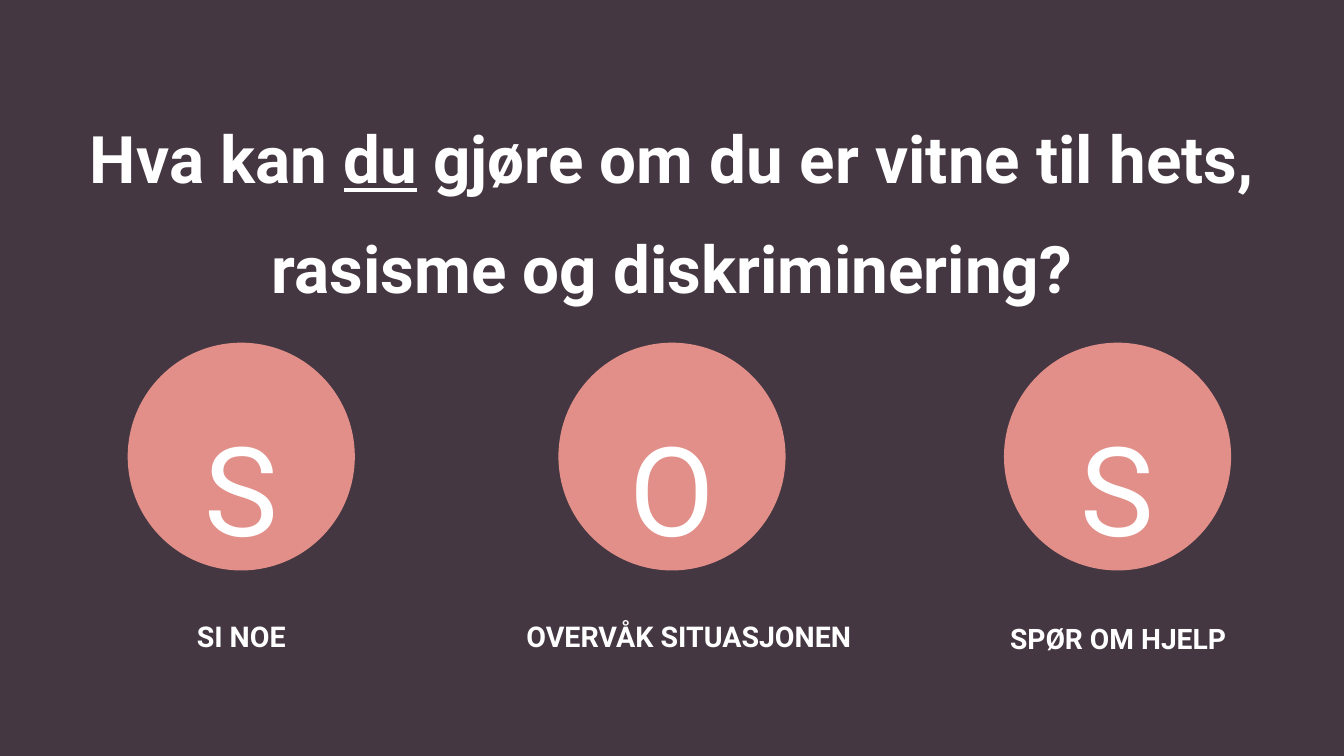
from pptx import Presentation
from pptx.dml.color import RGBColor
from pptx.enum.shapes import MSO_SHAPE
from pptx.enum.text import MSO_ANCHOR, MSO_AUTO_SIZE, PP_ALIGN
from pptx.util import Inches, Pt

OVAL = MSO_SHAPE.OVAL
TOP, MIDDLE = MSO_ANCHOR.TOP, MSO_ANCHOR.MIDDLE
CENTER = PP_ALIGN.CENTER
NO_AUTOFIT = MSO_AUTO_SIZE.NONE

SLIDE_WIDTH, SLIDE_HEIGHT = Inches(20), Inches(11.25)
BACKGROUND, CORAL, WHITE = "443742", "E28F89", "FFFFFF"
FONT = "Roboto"

TITLE_BOX = (0, 11.47, 100, 25.16)
TITLE_RUNS = [
    ("Hva kan ", False),
    ("du", True),
    (" gjøre om du er vitne til hets, rasisme og diskriminering?", False),
]
STEPS = [
    ("S", (9.5, 45.33, 16.9, 30.13), "SI NOE", (14.35, 80.09, 7.2, 4.53), 30.6),
    ("O", (41.55, 45.33, 16.9, 30.13), "OVERVÅK SITUASJONEN", (38.4, 80.09, 25.7, 4.53), 30.6),
    ("S", (74.7, 45.33, 16.9, 30.13), "SPØR OM HJELP", (74.85, 80.44, 16.7, 4.53), 30.2),
]


def to_lengths(box):
    """Turn a box in percent of the slide into left, top, width and height."""
    sides = (SLIDE_WIDTH, SLIDE_HEIGHT) * 2
    return [round(share * side / 100) for share, side in zip(box, sides)]


def paint(fill, color):
    """Give a fill one solid colour."""
    fill.solid()
    fill.fore_color.rgb = RGBColor.from_string(color)


def format_text(shape, size, bold, anchor=TOP, inset=0, wrap=True):
    """Format the frame and the single paragraph of a shape."""
    frame = shape.text_frame
    frame.word_wrap = wrap
    frame.auto_size = NO_AUTOFIT
    frame.vertical_anchor = anchor
    frame.margin_left = frame.margin_right = Inches(inset)
    frame.margin_top = frame.margin_bottom = Inches(inset)
    paragraph = frame.paragraphs[0]
    paragraph.alignment = CENTER
    paragraph.line_spacing = 1.4
    paragraph.font.name = FONT
    paragraph.font.size = Pt(size)
    paragraph.font.bold = bold
    paragraph.font.color.rgb = RGBColor.from_string(WHITE)


def add_title(slide, box):
    """Place the question in the title placeholder."""
    title = slide.shapes.title
    title.left, title.top, title.width, title.height = to_lengths(box)
    paragraph = title.text_frame.paragraphs[0]
    for text, underlined in TITLE_RUNS:
        run = paragraph.add_run()
        run.text = text
        run.font.underline = underlined
    format_text(title, 70.2, True)


def add_badge(slide, box, letter):
    """Draw a circle with its large letter as one group."""
    left, top, width, height = box
    group = slide.shapes.add_group_shape()
    circle = group.shapes.add_shape(OVAL, *to_lengths(box))
    circle.shadow.inherit = False
    paint(circle.fill, CORAL)
    circle.line.fill.background()
    letter_box = (left + 1.6, top - 6.66, width - 3.2, height + 13.34)
    text_box = group.shapes.add_textbox(*to_lengths(letter_box))
    text_box.text_frame.text = letter
    format_text(text_box, 133, False, MIDDLE, 0.06)


def add_label(slide, box, text, size):
    """Write the bold caption below a badge."""
    label = slide.shapes.add_textbox(*to_lengths(box))
    label.text_frame.text = text
    format_text(label, size, True, wrap=False)


def main():
    """Build the slide and save the presentation."""
    presentation = Presentation()
    presentation.slide_width = SLIDE_WIDTH
    presentation.slide_height = SLIDE_HEIGHT
    slide = presentation.slides.add_slide(presentation.slide_layouts.get_by_name("Title Only"))
    paint(slide.background.fill, BACKGROUND)
    add_title(slide, TITLE_BOX)
    for letter, badge_box, text, label_box, size in STEPS:
        add_badge(slide, badge_box, letter)
        add_label(slide, label_box, text, size)
    presentation.save("out.pptx")


if __name__ == "__main__":
    main()
